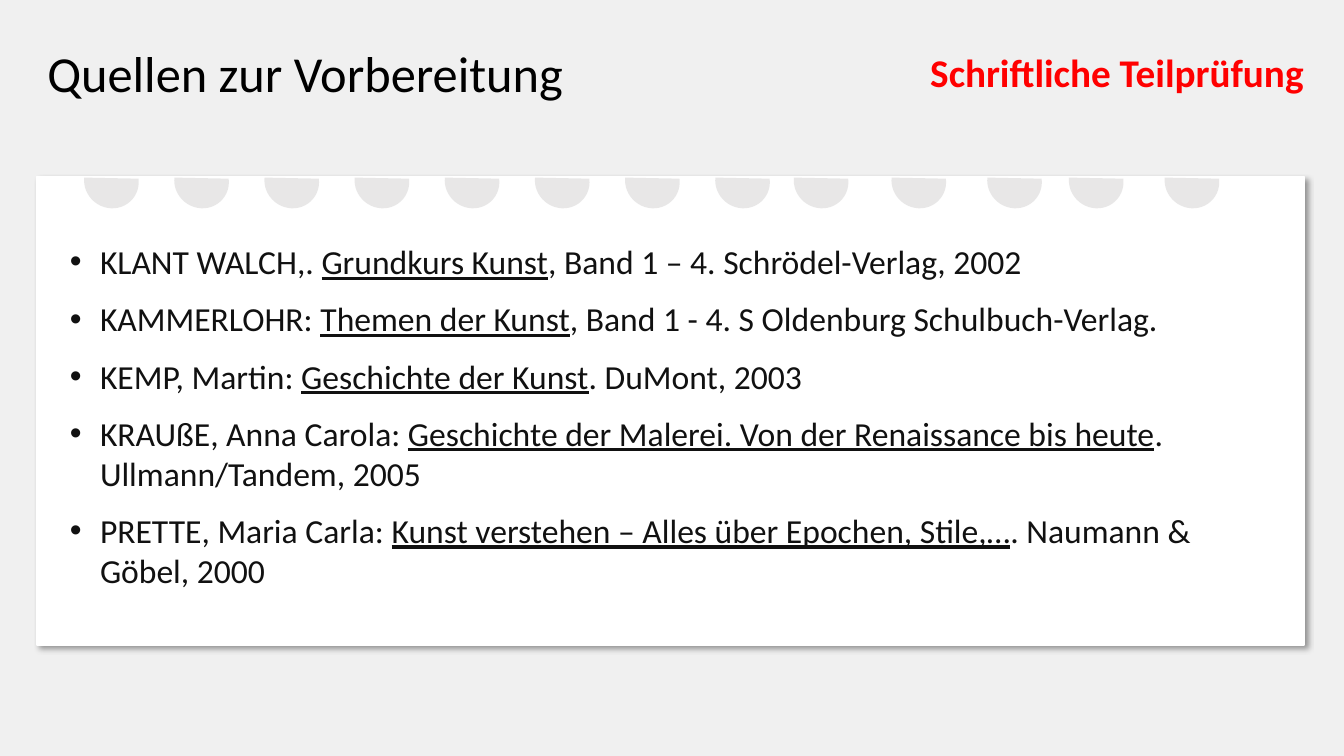
import pptx
import pptx.dml.color
import pptx.enum.shapes
import pptx.enum.text
import pptx.oxml
import pptx.oxml.ns
import pptx.util
from lxml import etree

Pt = pptx.util.Pt
SHAPES = pptx.enum.shapes.MSO_SHAPE
FONT = "Calibri"
GREY = "D0CECE"

# Each source: author, underlined title, publication details
SOURCES = [
    ("KLANT WALCH,. ", "Grundkurs Kunst", ", Band 1 – 4. Schrödel-Verlag, 2002"),
    ("KAMMERLOHR: ", "Themen der Kunst", ", Band 1 - 4. S Oldenburg Schulbuch-Verlag."),
    ("KEMP, Martin: ", "Geschichte der Kunst", ". DuMont, 2003"),
    ("KRAUßE, Anna Carola: ", "Geschichte der Malerei. Von der Renaissance bis heute",
     ". Ullmann/Tandem, 2005"),
    ("PRETTE, Maria Carla: ", "Kunst verstehen – Alles über Epochen, Stile,…",
     ". Naumann & Göbel, 2000"),
]

# Eight evenly spaced holes, then five placed by hand
HOLE_LEFTS = [60.5 + 64.4 * index for index in range(8)] + [567.4, 637.2, 705.6, 763.9, 832.3]


def color(hex_string):
    return pptx.dml.color.RGBColor.from_string(hex_string)


def add_run(paragraph, text, size, hex_string, bold=False, underline=False):
    run = paragraph.add_run()
    run.text = text
    run.font.name = FONT
    run.font.size = Pt(size)
    run.font.bold = bold
    run.font.underline = underline
    run.font.color.rgb = color(hex_string)


def write_heading(shape, box, text, size, hex_string, bold=False):
    shape.left, shape.top, shape.width, shape.height = map(Pt, box)
    frame = shape.text_frame
    frame.word_wrap = False
    frame.auto_size = pptx.enum.text.MSO_AUTO_SIZE.SHAPE_TO_FIT_TEXT
    frame.vertical_anchor = pptx.enum.text.MSO_ANCHOR.TOP
    paragraph = frame.paragraphs[0]
    paragraph.alignment = pptx.enum.text.PP_ALIGN.LEFT
    add_run(paragraph, text, size, hex_string, bold)


def add_filled_shape(slide, kind, box, fill):
    shape = slide.shapes.add_shape(kind, *map(Pt, box))
    shape.shadow.inherit = False
    shape.fill.solid()
    shape.fill.fore_color.rgb = color(fill)
    shape.line.fill.background()
    return shape


def add_card(slide, box):
    card = add_filled_shape(slide, SHAPES.RECTANGLE, box, "FFFFFF")
    card.line.color.rgb = color("FFFFFF")
    card.line.width = Pt(1)
    # Soft shadow towards the lower right
    effects = card._element.spPr.find(pptx.oxml.ns.qn("a:effectLst"))
    effects.append(pptx.oxml.parse_xml(
        f'<a:outerShdw {pptx.oxml.ns.nsdecls("a")} blurRad="{Pt(4)}" dist="{Pt(3)}" '
        'dir="2700000" algn="tl" rotWithShape="0">'
        '<a:srgbClr val="000000"><a:alpha val="40000"/></a:srgbClr></a:outerShdw>'))


def add_hole(slide, left):
    hole = add_filled_shape(slide, SHAPES.CHORD, (left, 109.6, 38.2, 39.6), GREY)
    hole.rotation = 309.7
    hole.adjustments[0] = 27
    hole.adjustments[1] = 142.664
    # Let the card show through
    grey = hole._element.spPr.find(".//" + pptx.oxml.ns.qn("a:srgbClr"))
    etree.SubElement(grey, pptx.oxml.ns.qn("a:alpha"), val="47000")


def add_bullet(paragraph, indent):
    properties = paragraph._p.get_or_add_pPr()
    properties.set("marL", str(Pt(indent)))
    properties.set("indent", str(Pt(-indent)))
    etree.SubElement(properties, pptx.oxml.ns.qn("a:buFont"), typeface="Arial")
    etree.SubElement(properties, pptx.oxml.ns.qn("a:buChar"), char="•")


def add_source_list(slide, box):
    shape = add_filled_shape(slide, SHAPES.ROUNDED_RECTANGLE, box, "FFFFFF")
    frame = shape.text_frame
    frame.word_wrap = True
    frame.auto_size = pptx.enum.text.MSO_AUTO_SIZE.SHAPE_TO_FIT_TEXT
    frame.vertical_anchor = pptx.enum.text.MSO_ANCHOR.TOP
    for index, (author, title, details) in enumerate(SOURCES):
        paragraph = frame.add_paragraph() if index else frame.paragraphs[0]
        add_bullet(paragraph, 21.6)
        paragraph.alignment = pptx.enum.text.PP_ALIGN.LEFT
        paragraph.space_after = Pt(12)
        add_run(paragraph, author, 24, "111111")
        add_run(paragraph, title, 24, "111111", underline=True)
        add_run(paragraph, details, 24, "111111")


def main():
    presentation = pptx.Presentation()
    presentation.slide_width = Pt(960)
    presentation.slide_height = Pt(540)
    slide = presentation.slides.add_slide(presentation.slide_layouts[5])
    slide.background.fill.solid()
    slide.background.fill.fore_color.rgb = color("F0F0F0")

    # Headings
    write_heading(slide.shapes.title, (26.6, 26.6, 386, 51),
                  "Quellen zur Vorbereitung", 36, "000000")
    exam_label = slide.shapes.add_textbox(0, 0, 0, 0)
    write_heading(exam_label, (657.4, 31, 285, 41),
                  "Schriftliche Teilprüfung", 28, "FF0000", bold=True)

    # Card with the source list and punched holes
    add_card(slide, (26.6, 126, 905, 334.8))
    add_source_list(slide, (28.8, 154.8, 892.8, 286.6))
    for left in HOLE_LEFTS:
        add_hole(slide, left)

    presentation.save("out.pptx")


if __name__ == "__main__":
    main()
